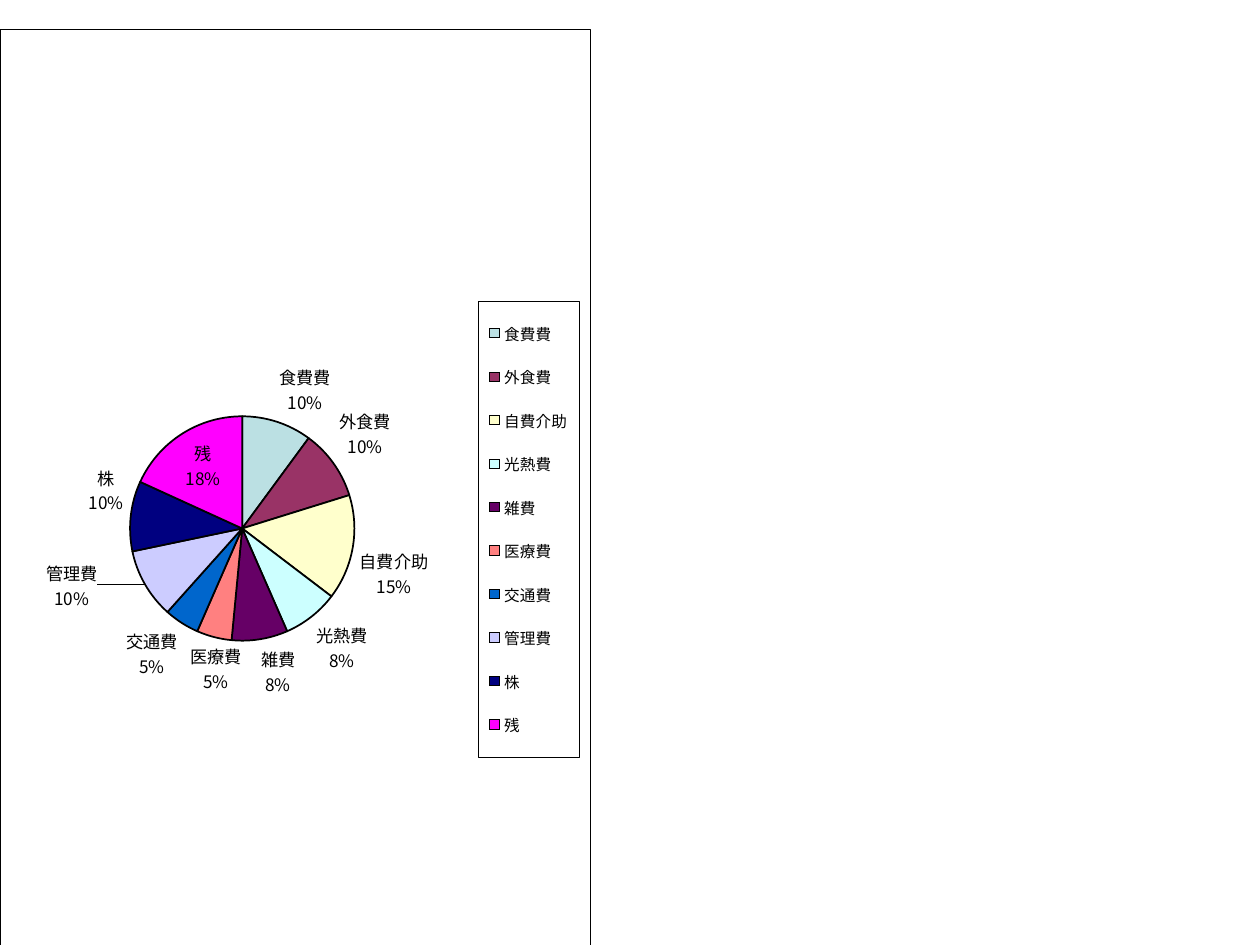
from lxml import etree
from pptx import Presentation
from pptx import util as u
from pptx.chart.data import CategoryChartData
from pptx.dml.color import RGBColor
from pptx.enum import chart as ce
from pptx.oxml import parse_xml
from pptx.oxml.ns import nsdecls, qn

FONT = "Noto Sans CJK JP"
BLACK = RGBColor(0, 0, 0)
COSTS = [
    ("食費費", 10, RGBColor(0xBB, 0xE0, 0xE3)),
    ("外食費", 10, RGBColor(0x99, 0x33, 0x66)),
    ("自費介助", 15, RGBColor(0xFF, 0xFF, 0xCC)),
    ("光熱費", 8, RGBColor(0xCC, 0xFF, 0xFF)),
    ("雑費", 8, RGBColor(0x66, 0x00, 0x66)),
    ("医療費", 5, RGBColor(0xFF, 0x80, 0x80)),
    ("交通費", 5, RGBColor(0x00, 0x66, 0xCC)),
    ("管理費", 10, RGBColor(0xCC, 0xCC, 0xFF)),
    ("株", 10, RGBColor(0x00, 0x00, 0x80)),
    ("残", 18, RGBColor(0xFF, 0x00, 0xFF)),
]
# Labels moved from their usual place, as shares of the chart
MOVED = {"医療費": (0.05, 0), "管理費": (-0.07, -0.03), "残": (0, 0)}


def layout(x, y, w=None, h=None, inner=False):
    """Manual layout; without a size it is an offset."""
    tags = [("layoutTarget", "inner")] if inner else []
    if w:
        tags += [("xMode", "edge"), ("yMode", "edge")]
    tags += [("x", x), ("y", y)]
    if w:
        tags += [("w", w), ("h", h)]
    body = "".join(f'<c:{t} val="{v}"/>' for t, v in tags)
    return parse_xml(f'<c:layout {nsdecls("c")}><c:manualLayout>{body}'
                     '</c:manualLayout></c:layout>')


def frame():
    """White box with a thin black border."""
    return parse_xml(
        f'<c:spPr {nsdecls("c", "a")}><a:solidFill><a:srgbClr val="FFFFFF"/>'
        '</a:solidFill><a:ln w="3175"><a:solidFill><a:srgbClr val="000000"/>'
        '</a:solidFill></a:ln></c:spPr>')


prs = Presentation()
prs.slide_width, prs.slide_height = u.Cm(25.4), u.Cm(19.05)
slide = prs.slides.add_slide(prs.slide_layouts[6])

# Pie chart
data = CategoryChartData()
data.categories = [name for name, _, _ in COSTS]
data.add_series("Series 1", [val for _, val, _ in COSTS])
chart = slide.shapes.add_chart(
    ce.XL_CHART_TYPE.PIE, u.Cm(0), u.Cm(0.58), u.Cm(11.91), u.Cm(18.47),
    data).chart
chart.has_title = False
chart.has_legend = True
key = chart.legend
key.position = ce.XL_LEGEND_POSITION.RIGHT
key.include_in_layout = False
plot = chart.plots[0]
plot.vary_by_categories = True
pie = plot.series[0]

# Slices
for i, (_, _, tint) in enumerate(COSTS):
    form = pie.points[i].format
    form.fill.solid()
    form.fill.fore_color.rgb = tint
    form.line.color.rgb = BLACK
    form.line.width = u.Pt(1)

# Labels
tags = pie.data_labels
for attr, val in {"show_category_name": True, "show_percentage": True,
                  "show_value": False, "number_format": "0%",
                  "number_format_is_linked": False,
                  "position": ce.XL_LABEL_POSITION.OUTSIDE_END}.items():
    setattr(tags, attr, val)
fonts = [(chart.font, 9.8), (tags.font, 9.8), (key.font, 8.9)]
for i, (name, _, _) in enumerate(COSTS):
    if name in MOVED:
        tag = pie.points[i].data_label
        fonts.append((tag.font, 9.8))
        tag.position = (ce.XL_LABEL_POSITION.INSIDE_END if name == "残"
                        else ce.XL_LABEL_POSITION.OUTSIDE_END)
for lab in pie._element.iter(qn("c:dLbl")):
    name = COSTS[int(lab.find(qn("c:idx")).get("val"))][0]
    for old in lab.findall(qn("c:layout")):
        lab.remove(old)
    lab.insert(1, layout(*MOVED[name]))
    for show, val in {"Val": 0, "CatName": 1, "Percent": 1}.items():
        lab.find(qn("c:show" + show)).set("val", str(val))
for lab in pie._element.iter(qn("c:dLbl"), qn("c:dLbls")):
    sep = etree.Element(qn("c:separator"))
    sep.text = "\n"
    last = lab.find(qn("c:showBubbleSize"))
    if last is None:
        last = lab.find(qn("c:showPercent"))
    last.addnext(sep)

# Fonts
for font, size in fonts:
    for attr, val in {"size": u.Pt(size), "name": FONT, "bold": False}.items():
        setattr(font, attr, val)
    font.color.rgb = BLACK
root = chart._chartSpace
for latin in list(root.iter(qn("a:latin"))):
    ea = etree.Element(qn("a:ea"))
    ea.set("typeface", FONT)
    latin.addnext(ea)

# Borders and places of chart, plot and legend
root.find(qn("c:txPr")).addprevious(frame())
box = key._element
box.find(qn("c:txPr")).addprevious(frame())
area = root.chart.plotArea
for part in (area, box):
    for old in part.findall(qn("c:layout")):
        part.remove(old)
area.insert(0, layout(0.22, 0.304, 0.38, 0.483, inner=True))
box.find(qn("c:legendPos")).addnext(layout(0.81, 0.297, 0.17, 0.498))

prs.save("out.pptx")
